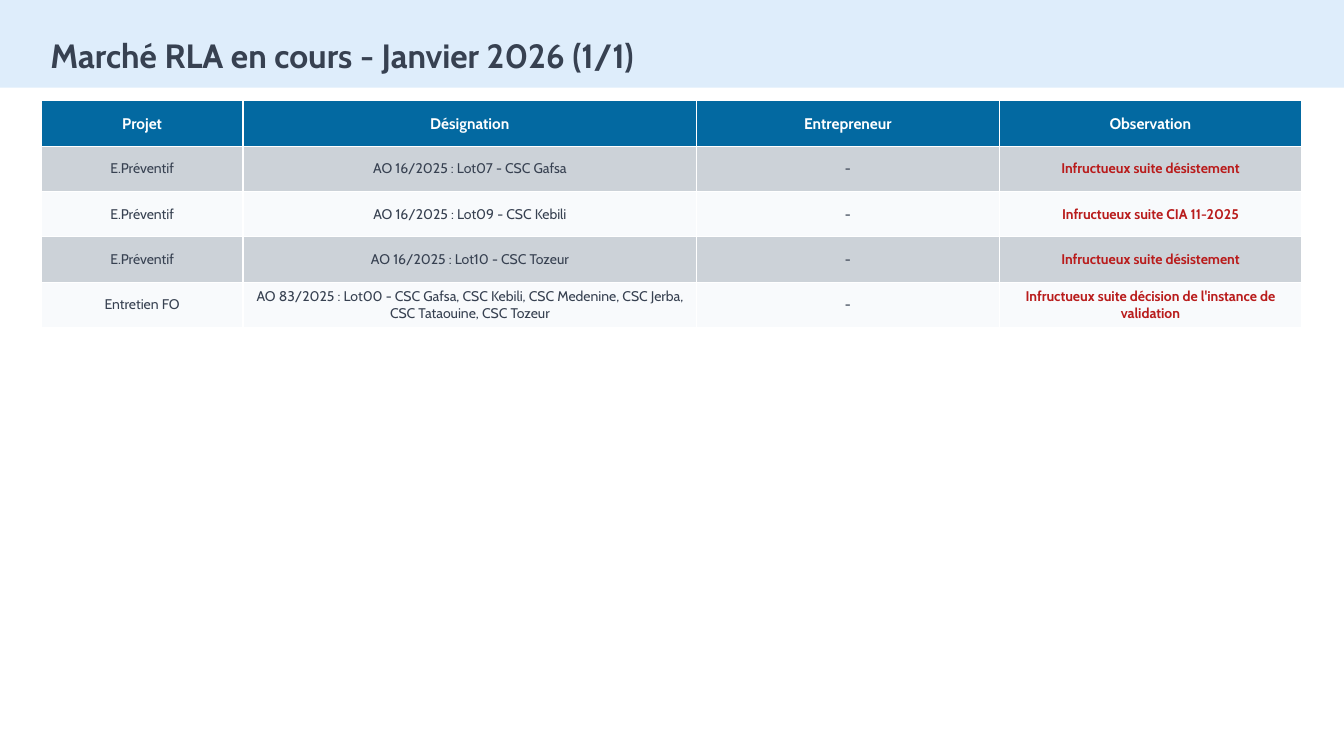
from pptx import Presentation
from pptx.dml.color import RGBColor
from pptx.enum.shapes import MSO_SHAPE
from pptx.enum.text import MSO_ANCHOR, MSO_AUTO_SIZE, PP_ALIGN
from pptx.util import Pt

PX = 9144  # EMU, 100 px to the inch
FONT = "Cabin"
WHITE = RGBColor(0xFF, 0xFF, 0xFF)
PALE_BLUE = RGBColor(0xDE, 0xED, 0xFB)
BLUE = RGBColor(0x03, 0x69, 0xA1)
SLATE = RGBColor(0x37, 0x41, 0x51)
RED = RGBColor(0xB9, 0x1C, 0x1C)
ROW_FILLS = (RGBColor(0xCC, 0xD2, 0xD8), RGBColor(0xF8, 0xFA, 0xFC))

TITLE = "Marché RLA en cours - Janvier 2026 (1/1)"
COLUMN_WIDTHS = (200, 450, 300, 300)
ROW_HEIGHT = 45
HEADERS = ("Projet", "Désignation", "Entrepreneur", "Observation")
CONTRACTS = (
    ("E.Préventif", "AO 16/2025 : Lot07 - CSC Gafsa", "-",
     "Infructueux suite désistement"),
    ("E.Préventif", "AO 16/2025 : Lot09 - CSC Kebili", "-",
     "Infructueux suite CIA 11-2025"),
    ("E.Préventif", "AO 16/2025 : Lot10 - CSC Tozeur", "-",
     "Infructueux suite désistement"),
    ("Entretien FO",
     "AO 83/2025 : Lot00 - CSC Gafsa, CSC Kebili, CSC Medenine, CSC Jerba, "
     "CSC Tataouine, CSC Tozeur", "-",
     "Infructueux suite décision de l'instance de validation"),
)


def px(*lengths):
    return [n * PX for n in lengths]


def add_run(p, text, size, color, bold):
    r = p.add_run()
    r.text = text
    r.font.name = FONT
    r.font.size = Pt(size)
    r.font.bold = bold
    r.font.color.rgb = color


def set_title(slide):
    sp = slide.shapes.title
    sp.left, sp.top, sp.width, sp.height = px(40, 30, 1200, 60)
    tf = sp.text_frame
    tf.word_wrap = False
    tf.auto_size = MSO_AUTO_SIZE.NONE
    tf.vertical_anchor = MSO_ANCHOR.TOP
    p = tf.paragraphs[0]
    p.alignment = PP_ALIGN.LEFT
    add_run(p, TITLE, 24, SLATE, True)


def add_title_band(slide):
    """Add the coloured strip behind the title."""
    sp = slide.shapes.add_shape(MSO_SHAPE.RECTANGLE, *px(0, 0, 1333, 87))
    sp.shadow.inherit = False
    sp.fill.solid()
    sp.fill.fore_color.rgb = PALE_BLUE
    sp.line.fill.background()
    slide.shapes.title.element.addprevious(sp.element)


def fill_cell(cell, text, fill, size, color, bold):
    cell.fill.solid()
    cell.fill.fore_color.rgb = fill
    cell.vertical_anchor = MSO_ANCHOR.MIDDLE
    p = cell.text_frame.paragraphs[0]
    p.alignment = PP_ALIGN.CENTER
    add_run(p, text, size, color, bold)


def add_contract_table(slide):
    n_rows = len(CONTRACTS) + 1
    table = slide.shapes.add_table(
        n_rows, len(HEADERS),
        *px(41, 100, sum(COLUMN_WIDTHS), n_rows * ROW_HEIGHT)).table
    for column, width in zip(table.columns, px(*COLUMN_WIDTHS)):
        column.width = width
    for col, text in enumerate(HEADERS):
        fill_cell(table.cell(0, col), text, BLUE, 11, WHITE, True)
    for row, contract in enumerate(CONTRACTS):
        fill = ROW_FILLS[row % 2]
        for col, text in enumerate(contract):
            is_observation = col == len(HEADERS) - 1
            color = RED if is_observation else SLATE
            fill_cell(table.cell(row + 1, col), text, fill, 10, color,
                      is_observation)


def main():
    prs = Presentation()
    prs.slide_width, prs.slide_height = px(1333, 750)
    slide = prs.slides.add_slide(prs.slide_layouts[5])
    set_title(slide)
    add_title_band(slide)
    add_contract_table(slide)
    prs.save("out.pptx")


if __name__ == "__main__":
    main()
